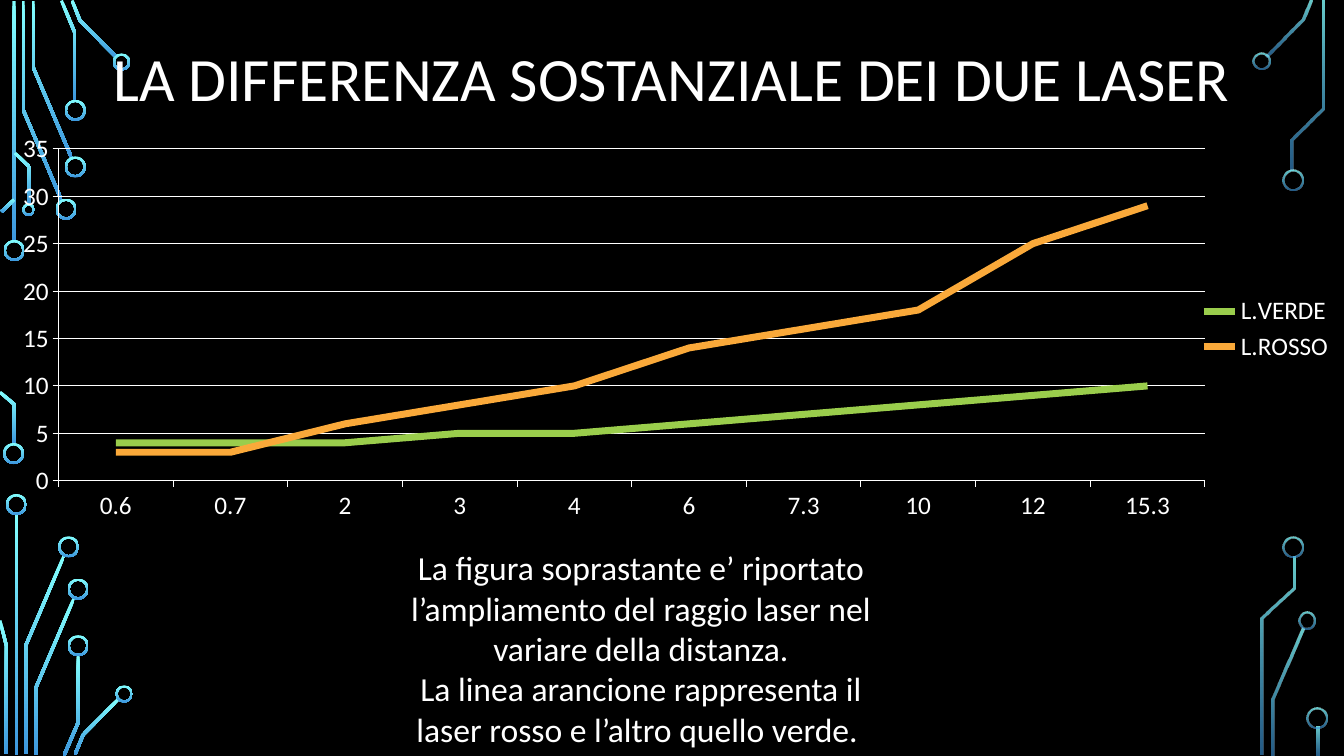
from math import hypot

from lxml import etree
from pptx import Presentation
from pptx.chart.data import CategoryChartData
from pptx.dml.color import RGBColor
from pptx.enum import chart as ch, shapes, text
from pptx.oxml import parse_xml
from pptx.oxml.ns import nsdecls, qn
from pptx.util import Pt

# Content
TITLE = "LA DIFFERENZA SOSTANZIALE DEI DUE LASER"
NOTES = [
    "La figura soprastante e’ riportato l’ampliamento del raggio laser nel variare della distanza.",
    "La linea arancione rappresenta il laser rosso e l’altro quello verde. ",
]
DISTANCES = ["0.6", "0.7", "2", "3", "4", "6", "7.3", "10", "12", "15.3"]
LASERS = [
    ("L.VERDE", "green", [4, 4, 4, 5, 5, 6, 7, 8, 9, 10]),
    ("L.ROSSO", "orange", [3, 3, 6, 8, 10, 14, 16, 18, 25, 29]),
]
COLORS = {"bg": "000000", "text": "FFFFFF", "green": "9ACD4C", "orange": "FAA93A",
          "glow_top": "82FFFF", "glow_bottom": "3D97DE"}
FONT = "Calibri"

# Circuit art: centre lines (x, y), and rings (centre x, centre y, diameter)
LEFT_TRACES = [
    [(10, 0.7), (10, 172.8)],
    [(43.9, 142.9), (16.6, 78.5), (16.6, 0.7)],
    [(51.1, 112.7), (23.6, 47.9), (23.6, 0.7)],
    [(53.6, 72), (53.6, 23.8), (43.9, 0.4)],
    [(83.2, 41), (57.2, 14.8), (51.5, 0.4)],
    [(1.1, 151.2), (10.1, 142.6)],
    [(10.1, 317.5), (10.1, 288.7), (0, 280.1)],
    [(20.9, 146.2), (20.9, 119.2), (10.8, 109.4)],
    [(11.9, 367.2), (11.9, 539.3)],
    [(18.4, 538.6), (18.4, 461.2), (45.7, 397.1)],
    [(4.7, 538.6), (4.7, 461.5), (0, 443.2)],
    [(25.6, 539.3), (25.6, 491.4), (52.9, 427.3)],
    [(45.7, 539.6), (55.8, 516.2), (55.8, 468)],
    [(53.6, 538.9), (59.4, 524.9), (85, 499)],
]
LEFT_RINGS = [
    (10.1, 178.9, 15), (9.7, 324, 15), (47.2, 149.4, 15), (53.8, 119.2, 15),
    (53.8, 78.8, 15), (86.8, 44.3, 12.4), (20.5, 149.8, 9), (11.7, 360.4, 15),
    (49, 390.6, 15), (55.8, 420.8, 15), (55.8, 461.2, 15), (88.7, 495.7, 12.4),
]
RIGHT_TRACES = [
    [(905, 40), (930.6, 14), (936.4, 0.4)],
    [(909, 539.3), (909, 499.3), (931, 448.9)],
    [(923, 121.7), (923, 99.7), (945, 77.4), (945, 0.7)],
    [(901.8, 539.3), (901.8, 441.7), (924.1, 420.1), (924.1, 397.4)],
    [(941.4, 519.1), (941.4, 539.3)],
]
RIGHT_RINGS = [
    (901.1, 43.6, 12.4), (923.4, 128.5, 15), (933.5, 443.2, 12.4),
    (923.8, 390.6, 15), (940.7, 512.6, 15),
]
TRACE_W, RING_W = 2.2, 1.5
SOLID, FADED = (100, 100), (80, 60)


def rgb(name):
    return RGBColor.from_string(COLORS[name])


def place(sp, left, top, width, height):
    sp.left, sp.top, sp.width, sp.height = Pt(left), Pt(top), Pt(width), Pt(height)


def write(tf, lines, size, spacing=None, anchor=text.MSO_ANCHOR.TOP):
    tf.word_wrap, tf.vertical_anchor = True, anchor
    tf.auto_size = text.MSO_AUTO_SIZE.NONE
    for i, line in enumerate(lines):
        p = tf.paragraphs[0] if i == 0 else tf.add_paragraph()
        p.alignment = text.PP_ALIGN.CENTER
        if spacing:
            p.line_spacing = spacing
        r = p.add_run()
        r.text = line
        style(r.font, size)


def style(font, size):
    font.name, font.size = FONT, Pt(size)
    font.color.rgb = rgb("text")


def glow(sp, opacity):
    sp.shadow.inherit = False
    sp.line.fill.background()
    sp.fill.gradient()
    sp.fill.gradient_angle = 270
    for stop, name in zip(sp.fill.gradient_stops, ("glow_top", "glow_bottom")):
        stop.color.rgb = rgb(name)
    for clr, percent in zip(sp._element.spPr.iter(qn("a:srgbClr")), opacity):
        if percent < 100:
            etree.SubElement(clr, qn("a:alpha")).set("val", str(percent * 1000))


def ribbon(points):
    """Outline of a band of even width, with mitred corners, round a centre line."""
    normals = []
    for (x1, y1), (x2, y2) in zip(points, points[1:]):
        d = hypot(x2 - x1, y2 - y1)
        normals.append(((y1 - y2) / d, (x2 - x1) / d))
    sides = [], []
    for (x, y), (ax, ay), (bx, by) in zip(points, normals[:1] + normals, normals + normals[-1:]):
        k = TRACE_W / 2 / (1 + ax * bx + ay * by)
        for side, sign in zip(sides, (1, -1)):
            side.append((x + sign * k * (ax + bx), y + sign * k * (ay + by)))
    return sides[0] + sides[1][::-1]


def draw_circuit(traces, rings, opacity):
    for trace in traces:
        outline = [(x * 100, y * 100) for x, y in ribbon(trace)]
        fb = s.shapes.build_freeform(*outline[0], scale=Pt(1) / 100)
        fb.add_line_segments(outline[1:], close=True)
        glow(fb.convert_to_shape(), opacity)
    for cx, cy, d in rings:
        sp = s.shapes.add_shape(shapes.MSO_SHAPE.DONUT, Pt(cx - d / 2), Pt(cy - d / 2), Pt(d), Pt(d))
        sp.adjustments[0] = RING_W / d
        glow(sp, opacity)


prs = Presentation()
prs.slide_width, prs.slide_height = Pt(960), Pt(540)
s = prs.slides.add_slide(prs.slide_layouts[5])
s.background.fill.solid()
s.background.fill.fore_color.rgb = rgb("bg")

# Circuit art on both sides
draw_circuit(LEFT_TRACES, LEFT_RINGS, SOLID)
draw_circuit(RIGHT_TRACES, RIGHT_RINGS, FADED)

# Title, in front of the art
title = s.shapes.title
s.shapes._spTree.append(title._element)
place(title, 0, 0, 960, 116.6)
write(title.text_frame, [TITLE], 44, spacing=0.9, anchor=text.MSO_ANCHOR.MIDDLE)

# Line chart
data = CategoryChartData()
data.categories = DISTANCES
for name, _, values in LASERS:
    data.add_series(name, values)
chart = s.shapes.add_chart(ch.XL_CHART_TYPE.LINE, Pt(0.5), Pt(95.4), Pt(960), Pt(279), data).chart
style(chart.font, 18)
chart.has_title = False
chart.has_legend = True
chart.legend.position = ch.XL_LEGEND_POSITION.RIGHT
chart.legend.include_in_layout = False
for series, (_, color, _) in zip(chart.plots[0].series, LASERS):
    series.smooth = False
    series.marker.style = ch.XL_MARKER_STYLE.NONE
    series.format.line.width = Pt(5)
    series.format.line.color.rgb = rgb(color)

val, cat = chart.value_axis, chart.category_axis
val.minimum_scale, val.maximum_scale, val.major_unit = 0, 35, 5
val.has_major_gridlines = True
cat.has_major_gridlines = False
for axis in (val, cat):
    axis.major_tick_mark = ch.XL_TICK_MARK.OUTSIDE
for part in (val, cat, val.major_gridlines):
    part.format.line.width = Pt(0.75)
    part.format.line.color.rgb = rgb("text")

# Fixed inner plot area
plot_area = chart._chartSpace.chart.plotArea
for old in plot_area.findall(qn("c:layout")):
    plot_area.remove(old)
box = "".join(f'<c:{k} val="{v}"/>' for k, v in
              [("layoutTarget", "inner"), ("xMode", "edge"), ("yMode", "edge"),
               ("x", 0.043), ("y", 0.039), ("w", 0.853), ("h", 0.85)])
plot_area.insert(0, parse_xml(
    f'<c:layout {nsdecls("c")}><c:manualLayout>{box}</c:manualLayout></c:layout>'))

# Explanation
notes = s.shapes.add_textbox(Pt(280), Pt(387.4), Pt(355.7), Pt(152.6))
write(notes.text_frame, NOTES, 24)

prs.save("out.pptx")
